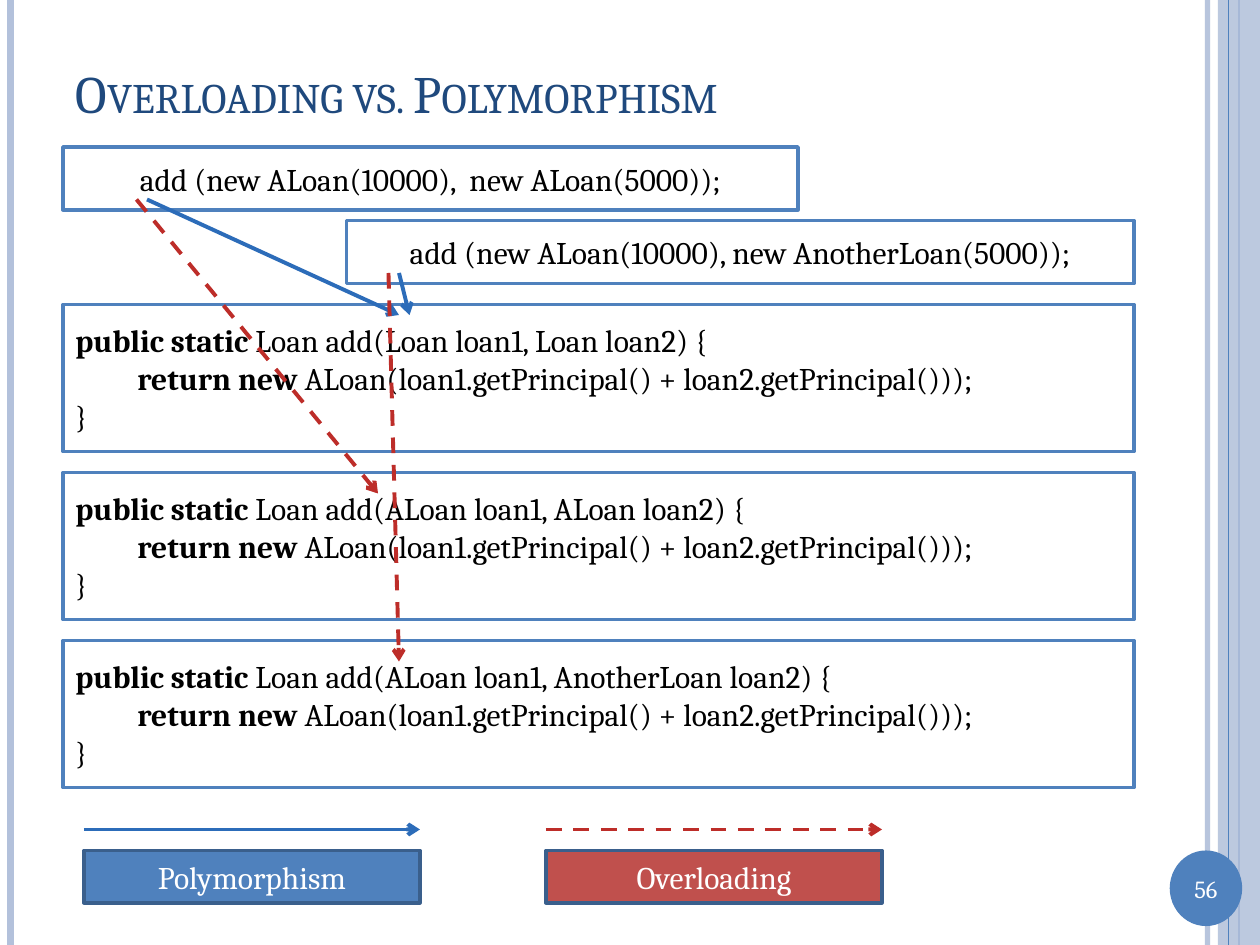
import dataclasses
import typing

import pptx
import pptx.dml.color
import pptx.enum.dml
import pptx.enum.shapes
import pptx.enum.text
import pptx.oxml.ns
import pptx.util
from lxml import etree

COLUMNS, ROWS = 120, 90
ALIGN = pptx.enum.text.PP_ALIGN
SHAPES = pptx.enum.shapes.MSO_SHAPE
Line = list[tuple[str, bool]]  # runs of (words, bold)


@dataclasses.dataclass(frozen=True)
class Theme:
    font: str = "Cambria"
    title: str = "1F497D"
    code: str = "000000"
    paper: str = "FFFFFF"
    blue: str = "4F81BD"
    red: str = "C0504D"
    pale: str = "B3C1DB"
    legend_edge: str = "3A5F8C"
    blue_arrow: str = "2C6CB9"
    red_arrow: str = "BD2D29"
    title_size: int = 30
    body_size: int = 18
    number_size: int = 14
    edge: float = 2
    arrow: float = 2.25


class Box(typing.NamedTuple):
    left: float
    top: float
    width: float
    height: float


class Stroke(typing.NamedTuple):
    start: tuple[float, float]
    end: tuple[float, float]
    color: str
    width: float
    dashed: bool = False
    arrow: bool = False
    alpha: int = 100


THEME = Theme()
deck = pptx.Presentation()
deck.slide_width = pptx.util.Inches(10)
deck.slide_height = pptx.util.Inches(7.5)
slide = deck.slides.add_slide(deck.slide_layouts[5])


def x(column: float) -> int:
    return round(deck.slide_width * column / COLUMNS)


def y(row: float) -> int:
    return round(deck.slide_height * row / ROWS)


def rgb(color: str) -> pptx.dml.color.RGBColor:
    return pptx.dml.color.RGBColor.from_string(color)


def add_xml(parent, tag: str, **attributes: str) -> None:
    etree.SubElement(parent, pptx.oxml.ns.qn(tag), **attributes)


def set_alpha(properties, percent: int) -> None:
    if percent < 100:
        color = properties.find(".//" + pptx.oxml.ns.qn("a:srgbClr"))
        add_xml(color, "a:alpha", val=str(percent * 1000))


def write(frame, lines: list[Line], *, size: int, color: str, align=ALIGN.LEFT,
          small_caps: bool = False, indents: tuple[float, ...] = ()) -> None:
    frame.word_wrap = True
    frame.vertical_anchor = pptx.enum.text.MSO_ANCHOR.MIDDLE
    for index, line in enumerate(lines):
        paragraph = frame.paragraphs[0] if index == 0 else frame.add_paragraph()
        paragraph.alignment = align
        if index < len(indents) and indents[index]:
            paragraph._p.get_or_add_pPr().set("marL", str(x(indents[index])))
        for words, bold in line:
            run = paragraph.add_run()
            run.text = words
            run.font.name = THEME.font
            run.font.size = pptx.util.Pt(size)
            run.font.bold = bold
            run.font.color.rgb = rgb(color)
            if small_caps:
                run._r.get_or_add_rPr().set("cap", "small")


def draw_box(box: Box, fill: str, edge: str | None = None,
             kind=SHAPES.RECTANGLE, alpha: int = 100):
    shape = slide.shapes.add_shape(
        kind, x(box.left), y(box.top), x(box.width), y(box.height))
    shape.shadow.inherit = False
    shape.fill.solid()
    shape.fill.fore_color.rgb = rgb(fill)
    set_alpha(shape._element.spPr, alpha)
    if edge:
        shape.line.color.rgb = rgb(edge)
        shape.line.width = pptx.util.Pt(THEME.edge)
    else:
        shape.line.fill.background()
    return shape


def draw_stroke(stroke: Stroke) -> None:
    line = slide.shapes.add_connector(
        pptx.enum.shapes.MSO_CONNECTOR.STRAIGHT,
        x(stroke.start[0]), y(stroke.start[1]), x(stroke.end[0]), y(stroke.end[1]))
    line.line.color.rgb = rgb(stroke.color)
    line.line.width = pptx.util.Pt(stroke.width)
    properties = line._element.spPr
    set_alpha(properties, stroke.alpha)
    if stroke.dashed:
        line.line.dash_style = pptx.enum.dml.MSO_LINE.DASH
    if stroke.arrow:
        add_xml(line.line._get_or_add_ln(), "a:tailEnd", type="arrow")
    add_xml(properties, "a:effectLst")


def draw_call(box: Box, call: str) -> None:
    write(draw_box(box, THEME.paper, THEME.blue).text_frame, [[(call, False)]],
          size=THEME.body_size, color=THEME.code, align=ALIGN.CENTER)


def draw_method(top: float, parameters: str) -> None:
    lines = [
        [("public static", True), (f" Loan add({parameters}) {{", False)],
        [("return new ", True),
         ("ALoan(loan1.getPrincipal() + loan2.getPrincipal()));", False)],
        [("}", False)],
    ]
    method = draw_box(Box(6, top, 102, 14), THEME.paper, THEME.blue)
    write(method.text_frame, lines, size=THEME.body_size, color=THEME.code,
          indents=(0, 5.9))


def polymorphism(start: tuple[float, float], end: tuple[float, float]) -> Stroke:
    return Stroke(start, end, THEME.blue_arrow, THEME.arrow, arrow=True)


def overloading(start: tuple[float, float], end: tuple[float, float]) -> Stroke:
    return Stroke(start, end, THEME.red_arrow, THEME.arrow, dashed=True, arrow=True)


# Side bands and slide number
for column, color, width, alpha in [(115, THEME.pale, 3, 93), (1, THEME.pale, 4.5, 100),
                                    (118, THEME.blue, 1.5, 100)]:
    draw_stroke(Stroke((column, 0), (column, ROWS), color, width, alpha=alpha))
draw_box(Box(116, 0, 4, ROWS), THEME.pale, alpha=87)
draw_stroke(Stroke((117, 0), (117, ROWS), THEME.blue, 0.75))
number = draw_box(Box(111.4, 81, 6.9, 7.2), THEME.blue, kind=SHAPES.OVAL).text_frame
number.margin_left = number.margin_right = 0
write(number, [[("56", False)]], size=THEME.number_size, color=THEME.paper,
      align=ALIGN.CENTER)

# Title
title = slide.shapes.title
title.left, title.top, title.width, title.height = x(6), y(3.6), x(104), y(10.4)
write(title.text_frame, [[("Overloading vs. Polymorphism", False)]],
      size=THEME.title_size, color=THEME.title, small_caps=True)

# Method declarations
for place, parameters in enumerate(["Loan loan1, Loan loan2", "ALoan loan1, ALoan loan2",
                                    "ALoan loan1, AnotherLoan loan2"]):
    draw_method(29 + 16 * place, parameters)

# Legend
for left, label, fill, arrow in [(8, "Polymorphism", THEME.blue, polymorphism),
                                 (52, "Overloading", THEME.red, overloading)]:
    draw_stroke(arrow((left, 79), (left + 32, 79)))
    key = draw_box(Box(left, 81, 32, 5), fill, THEME.legend_edge)
    write(key.text_frame, [[(label, False)]], size=THEME.body_size,
          color=THEME.paper, align=ALIGN.CENTER)

# Calls and the methods they reach
draw_call(Box(6, 14, 70, 6), "add (new ALoan(10000),  new ALoan(5000));")
draw_call(Box(33, 21, 75, 6), "add (new ALoan(10000), new AnotherLoan(5000));")
for link in [polymorphism((38, 26), (39, 30)), polymorphism((14, 19), (38, 30)),
             overloading((13, 19), (36, 47)), overloading((37, 26), (38, 63))]:
    draw_stroke(link)

deck.save("out.pptx")
